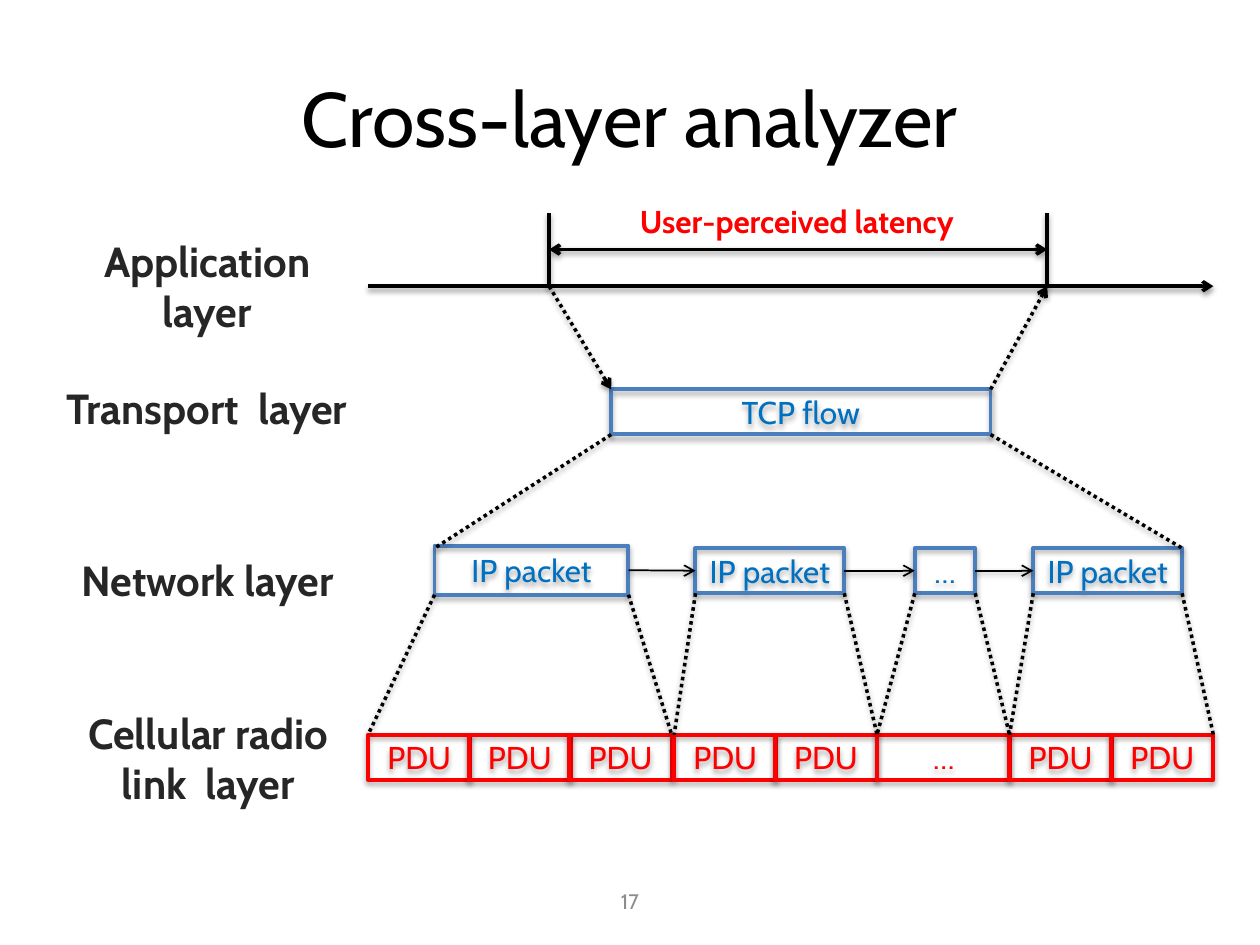
from lxml.etree import SubElement
from pptx import Presentation
from pptx.dml.color import RGBColor
from pptx.enum.dml import MSO_LINE
from pptx.enum.shapes import MSO_CONNECTOR, MSO_SHAPE
from pptx.enum.text import MSO_ANCHOR, PP_ALIGN
from pptx.oxml import parse_xml
from pptx.oxml.ns import nsdecls, qn
from pptx.util import Cm, Pt

BLACK, GREY, RED = "000000", "262626", "FF0000"
BLUE_LINE, BLUE_TEXT = "4B7EBC", "0070C0"
SHADOW = (
    '<a:effectLst %s><a:outerShdw blurRad="40000" dist="%d" dir="5400000" rotWithShape="0">'
    '<a:srgbClr val="000000"><a:alpha val="%d"/></a:srgbClr></a:outerShdw></a:effectLst>'
)


def set_text(shape, text, size, color, bold=False):
    """Write centred paragraphs, one for each line of text."""
    tf = shape.text_frame
    tf.text = text
    tf.vertical_anchor = MSO_ANCHOR.MIDDLE
    for p in tf.paragraphs:
        p.alignment = PP_ALIGN.CENTER
        p.font.name = "Cabin"
        p.font.size = Pt(size)
        p.font.bold = bold
        p.font.color.rgb = RGBColor.from_string(color)


def style_line(shape, color, width, dotted=False, ends=(), dist=20000, alpha=38000):
    """Set the outline, its arrowheads and the soft shadow below it."""
    shape.line.color.rgb = RGBColor.from_string(color)
    shape.line.width = Pt(width)
    if dotted:
        shape.line.dash_style = MSO_LINE.ROUND_DOT
    sp_pr = shape._element.spPr
    for end in ends:
        SubElement(sp_pr.find(qn("a:ln")), qn("a:" + end), type="arrow")
    sp_pr.append(parse_xml(SHADOW % (nsdecls("a"), dist, alpha)))


prs = Presentation()
prs.slide_width, prs.slide_height = Cm(25.4), Cm(19.05)
s = prs.slides.add_slide(prs.slide_layouts[5])

title = s.shapes.title
title.left, title.top, title.width, title.height = Cm(1.27), Cm(0.76), Cm(22.86), Cm(3.18)
set_text(title, "Cross-layer analyzer", 44, BLACK)

# Layer names, latency caption and page number
for text, x, y, w, h, size, color, bold in [
    ("Application\nlayer", 1.8, 4.6, 4.75, 2.31, 24, GREY, True),
    ("Transport  layer", 1.04, 7.59, 6.27, 1.27, 24, GREY, True),
    ("Network layer", 1.3, 11.05, 5.77, 1.27, 24, GREY, True),
    ("Cellular radio\nlink  layer", 1.42, 14.12, 5.56, 2.31, 24, GREY, True),
    ("User-perceived latency", 12.65, 3.94, 6.83, 1.02, 18, RED, True),
    ("17", 1.27, 17.65, 22.86, 1.02, 12, "8C8C8C", False),
]:
    tb = s.shapes.add_textbox(Cm(x), Cm(y), Cm(w), Cm(h))
    tb.text_frame.word_wrap = False
    set_text(tb, text, size, color, bold)

# Boxes: text, left, top, width, height
flow = ("TCP flow", 12.32, 7.85, 7.65, 0.91)
packets = [
    ("IP packet", 8.76, 11, 3.91, 0.99),
    ("IP packet", 14.02, 11.05, 3, 0.91),
    ("…", 18.44, 11.05, 1.22, 0.91),
    ("IP packet", 20.83, 11.05, 3, 0.91),
]
pdu_top = 14.81
pdus = [("PDU", x, pdu_top, 2.06, 0.91) for x in (7.42, 9.45, 11.48, 13.59, 15.62)]
pdus.append(("…", 17.68, pdu_top, 2.69, 0.91))
pdus += [("PDU", x, pdu_top, 2.06, 0.91) for x in (20.35, 22.4)]

packet_shapes = []
for box in [flow] + packets + pdus:
    text, x, y, w, h = box
    line_color, text_color = (RED, RED) if box in pdus else (BLUE_LINE, BLUE_TEXT)
    sp = s.shapes.add_shape(MSO_SHAPE.RECTANGLE, Cm(x), Cm(y), Cm(w), Cm(h))
    sp.fill.background()
    style_line(sp, line_color, 2.25, dist=23000, alpha=35000)
    tf = sp.text_frame
    tf.margin_left = tf.margin_right = tf.margin_top = tf.margin_bottom = 0
    set_text(sp, text, 18, text_color)
    if box in packets:
        packet_shapes.append(sp)

# Lines: x1, y1, x2, y2, dotted, arrowheads
axis_y, start_x, end_x = 5.77, 11.07, 21.11
flow_left, flow_top = flow[1:3]
flow_right, flow_bottom = flow_left + flow[3], flow_top + flow[4]
lines = [
    (7.42, axis_y, 24.46, axis_y, False, ["tailEnd"]),
    (start_x, 4.29, start_x, axis_y, False, []),
    (end_x, 4.29, end_x, axis_y, False, []),
    (start_x, 5.03, end_x, 5.03, False, ["headEnd", "tailEnd"]),
    (start_x, axis_y, flow_left, flow_top, True, ["tailEnd"]),
    (flow_right, flow_top, end_x, axis_y, True, ["tailEnd"]),
    (flow_left, flow_bottom, 8.76, 11.05, True, []),
    (flow_right, flow_bottom, 23.83, 11.05, True, []),
]
# Each packet fans out to the PDUs that carry it
pdu_spans = [(7.42, 13.54), (13.59, 17.68), (17.68, 20.35), (20.35, 24.46)]
for (_, x, y, w, h), (left, right) in zip(packets, pdu_spans):
    lines.append((x, y + h, left, pdu_top, True, []))
    lines.append((x + w, y + h, right, pdu_top, True, []))

for x1, y1, x2, y2, dotted, ends in lines:
    c = s.shapes.add_connector(MSO_CONNECTOR.STRAIGHT, Cm(x1), Cm(y1), Cm(x2), Cm(y2))
    style_line(c, BLACK, 2, dotted, ends)

for a, b in zip(packet_shapes, packet_shapes[1:]):
    c = s.shapes.add_connector(MSO_CONNECTOR.STRAIGHT, 0, 0, 0, 0)
    c.begin_connect(a, 3)
    c.end_connect(b, 1)
    style_line(c, BLACK, 1, ends=["tailEnd"])

prs.save("out.pptx")
